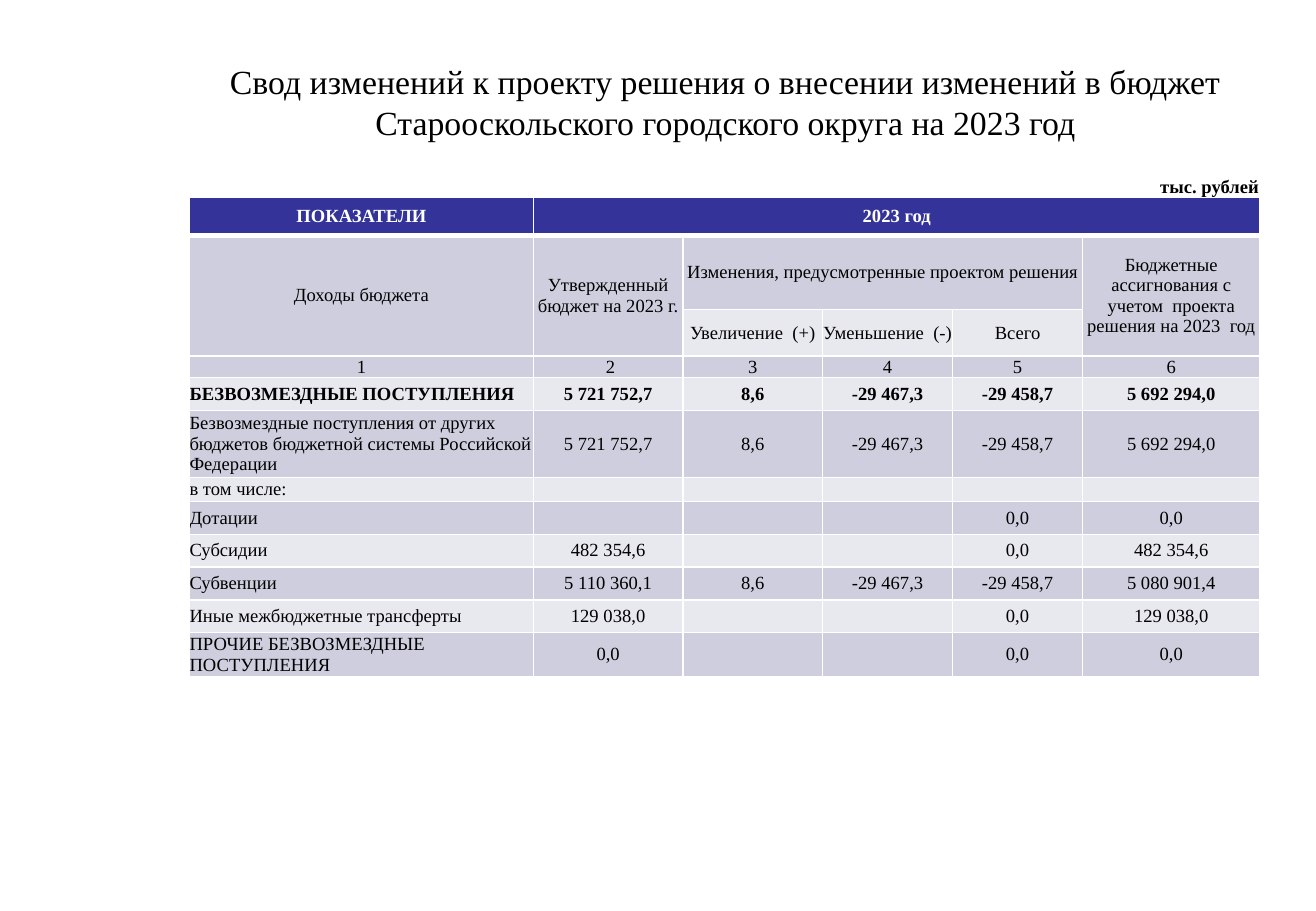
from dataclasses import dataclass

from lxml import etree
from pptx import Presentation
from pptx.dml import color
from pptx.enum import text
from pptx.oxml import ns
from pptx.util import Inches, Pt

FONT = "Times New Roman"
BLACK, WHITE = "000000", "FFFFFF"
HEADER_FILL, DARK_BAND, LIGHT_BAND = "333399", "CECEDE", "E8E8EF"
CENTER, LEFT, RIGHT = text.PP_ALIGN.CENTER, text.PP_ALIGN.LEFT, text.PP_ALIGN.RIGHT
TABLE_LEFT, TABLE_TOP = 1.56, 1.62
COLUMN_WIDTHS = [2.83, 1.23, 1.15, 1.07, 1.07, 1.46]
HEADING_ROWS = 4


@dataclass
class Row:
    height: float
    values: list[str]
    bold: bool = False


@dataclass
class Label:
    words: str
    left: float
    top: float
    width: float
    height: float
    size: float
    align: text.PP_ALIGN
    anchor: text.MSO_ANCHOR
    bold: bool = False
    wrap: bool = True


ROWS = [
    Row(0.32, ["ПОКАЗАТЕЛИ", "2023 год", "", "", "", ""], True),
    Row(0.61, ["Доходы бюджета", "Утвержденный бюджет на 2023 г.",
               "Изменения, предусмотренные проектом решения", "", "",
               "Бюджетные ассигнования с учетом  проекта решения на 2023  год"]),
    Row(0.38, ["", "", "Увеличение  (+)", "Уменьшение  (-)", "Всего", ""]),
    Row(0.18, ["1", " 2", "3", "4", "5", "6"]),
    Row(0.27, ["БЕЗВОЗМЕЗДНЫЕ ПОСТУПЛЕНИЯ", "5 721 752,7", "8,6",
               "-29 467,3", "-29 458,7", "5 692 294,0"], True),
    Row(0.55, ["Безвозмездные поступления от других бюджетов бюджетной системы "
               "Российской Федерации", "5 721 752,7", "8,6",
               "-29 467,3", "-29 458,7", "5 692 294,0"]),
    Row(0.2, ["в том числе:", "", "", "", "", ""]),
    Row(0.27, ["Дотации", "", "", "", "0,0", "0,0"]),
    Row(0.27, ["Субсидии", "482 354,6", "", "", "0,0", "482 354,6"]),
    Row(0.27, ["Субвенции", "5 110 360,1", "8,6", "-29 467,3", "-29 458,7", "5 080 901,4"]),
    Row(0.27, ["Иные межбюджетные трансферты", "129 038,0", "", "", "0,0", "129 038,0"]),
    Row(0.36, ["ПРОЧИЕ БЕЗВОЗМЕЗДНЫЕ ПОСТУПЛЕНИЯ", "0,0", "", "", "0,0", "0,0"]),
]
MERGES = [((0, 1), (0, 5)), ((1, 0), (2, 0)), ((1, 1), (2, 1)),
          ((1, 2), (1, 4)), ((1, 5), (2, 5))]
LABELS = [
    Label("Свод изменений к проекту решения о внесении изменений в бюджет "
          "Старооскольского городского округа на 2023 год",
          TABLE_LEFT, 0.21, 8.82, 1.25, 20, CENTER, text.MSO_ANCHOR.MIDDLE),
    Label("тыс. рублей", 9.43, 1.39, 1.03, 0.29, 11, RIGHT, text.MSO_ANCHOR.TOP,
          bold=True, wrap=False),
]


def rgb(value: str) -> color.RGBColor:
    return color.RGBColor.from_string(value)


def write(paragraph, words: str, size: float, ink: str, bold: bool, align) -> None:
    paragraph.alignment = align
    run = paragraph.add_run()
    run.text = words
    run.font.name = FONT
    run.font.size = Pt(size)
    run.font.bold = bold
    run.font.color.rgb = rgb(ink)


def add_border(cell, side: str, points: float) -> None:
    properties = cell._tc.get_or_add_tcPr()
    line = etree.SubElement(properties, ns.qn(f"a:ln{side}"), w=str(Pt(points)))
    fill = etree.SubElement(line, ns.qn("a:solidFill"))
    etree.SubElement(fill, ns.qn("a:srgbClr"), val=WHITE)


def style_cell(cell, row: int, column: int) -> None:
    cell.margin_left = cell.margin_right = cell.margin_top = cell.margin_bottom = 0
    cell.vertical_anchor = text.MSO_ANCHOR.MIDDLE
    for side in "LRTB":
        under_header = (row, side) in ((0, "B"), (1, "T"))
        add_border(cell, side, 3 if under_header else 1)
    cell.fill.solid()
    band = DARK_BAND if row % 2 else LIGHT_BAND
    cell.fill.fore_color.rgb = rgb(band if row else HEADER_FILL)
    paragraph = cell.text_frame.paragraphs[0]
    words = ROWS[row].values[column]
    if words:
        align = LEFT if column == 0 and row >= HEADING_ROWS else CENTER
        write(paragraph, words, 11, BLACK if row else WHITE, ROWS[row].bold, align)
    else:
        etree.SubElement(paragraph._p, ns.qn("a:endParaRPr"), sz="1100")


def add_budget_table(slide) -> None:
    frame = slide.shapes.add_table(
        len(ROWS), len(COLUMN_WIDTHS), Inches(TABLE_LEFT), Inches(TABLE_TOP),
        Inches(sum(COLUMN_WIDTHS)), Inches(sum(row.height for row in ROWS)))
    table = frame.table
    for column, width in zip(table.columns, COLUMN_WIDTHS):
        column.width = Inches(width)
    for index, row in enumerate(ROWS):
        table.rows[index].height = Inches(row.height)
        for column in range(len(COLUMN_WIDTHS)):
            style_cell(table.cell(index, column), index, column)
    for first, last in MERGES:
        table.cell(*first).merge(table.cell(*last))


def add_label(slide, label: Label) -> None:
    shape = slide.shapes.add_textbox(Inches(label.left), Inches(label.top),
                                     Inches(label.width), Inches(label.height))
    frame = shape.text_frame
    frame.word_wrap = label.wrap
    frame.vertical_anchor = label.anchor
    write(frame.paragraphs[0], label.words, label.size, BLACK, label.bold, label.align)


def main() -> None:
    presentation = Presentation()
    presentation.slide_width = Inches(10.83)
    presentation.slide_height = Inches(7.5)
    slide = presentation.slides.add_slide(presentation.slide_layouts[6])
    add_budget_table(slide)
    for label in LABELS:
        add_label(slide, label)
    presentation.save("out.pptx")


if __name__ == "__main__":
    main()
